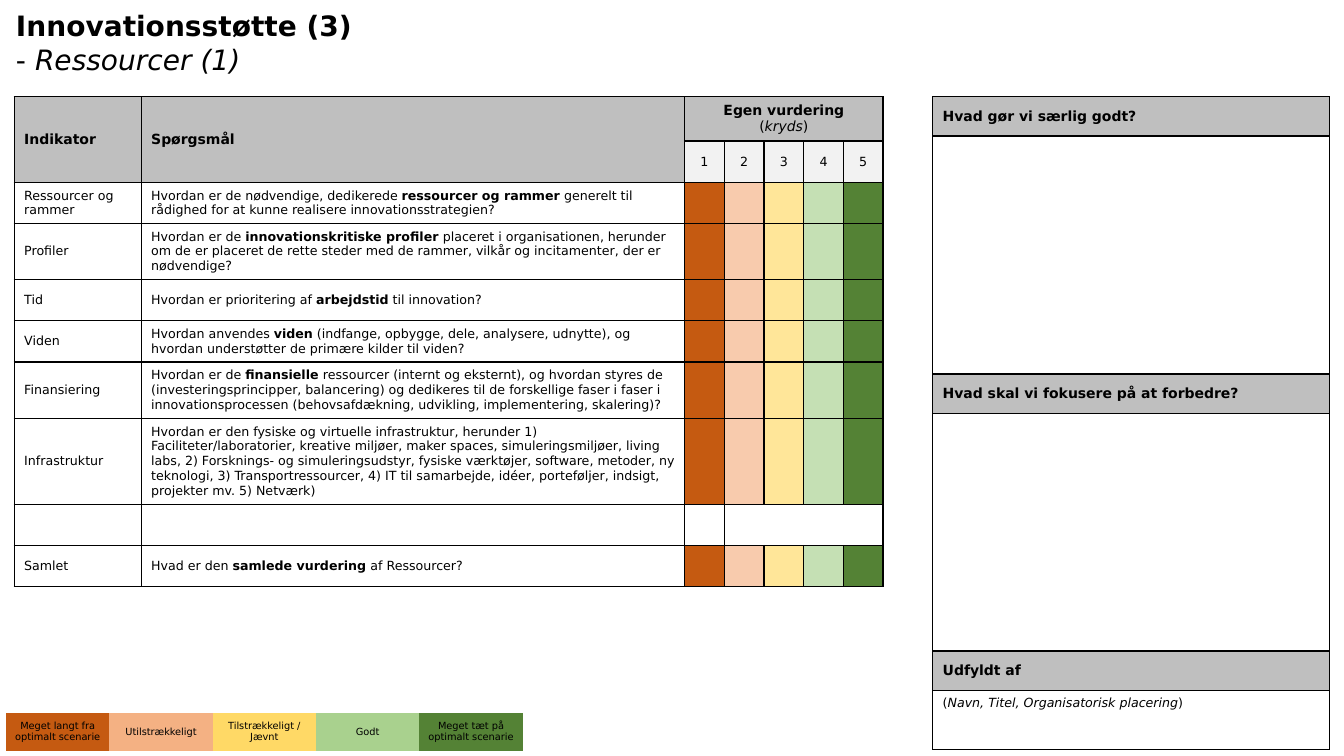
from copy import deepcopy

from lxml.etree import SubElement
from pptx import Presentation
from pptx.dml.color import RGBColor
from pptx.enum.text import MSO_ANCHOR as Anchor, PP_ALIGN as Align
from pptx.oxml.ns import qn
from pptx.util import Inches, Pt

FONT = "DejaVu Sans"
COLORS = {"ink": "000000", "header": "BFBFBF", "score": "F2F2F2"}
SCALE = ["C55A11", "F8CBAD", "FFE699", "C5E0B4", "548235"]
LEGEND = {
    "Meget langt fra optimalt scenarie": "C55A11",
    "Utilstrækkeligt": "F4B183",
    "Tilstrækkeligt / Jævnt": "FFD966",
    "Godt": "A9D18E",
    "Meget tæt på optimalt scenarie": "548235",
}
NO_STYLE = "{2D5ABB26-0587-4C30-8999-92F81FD0307C}"

# Each run is (text, style): "b" bold, "i" italic, "" plain.
QUESTIONS = [
    ("Ressourcer og rammer", [
        ("Hvordan er de nødvendige, dedikerede ", ""), ("ressourcer og rammer ", "b"),
        ("generelt til rådighed for at kunne realisere innovationsstrategien?", "")]),
    ("Profiler", [
        ("Hvordan er de ", ""), ("innovationskritiske profiler ", "b"),
        ("placeret i organisationen, herunder om de er placeret de rette steder med de "
         "rammer, vilkår og incitamenter, der er nødvendige?", "")]),
    ("Tid", [
        ("Hvordan er prioritering af ", ""), ("arbejdstid", "b"), (" til innovation?", "")]),
    ("Viden", [
        ("Hvordan anvendes ", ""), ("viden", "b"),
        (" (indfange, opbygge, dele, analysere, udnytte), og hvordan understøtter de "
         "primære kilder til viden?", "")]),
    ("Finansiering", [
        ("Hvordan er de ", ""), ("finansielle ", "b"),
        ("ressourcer (internt og eksternt), og hvordan styres de (investeringsprincipper, "
         "balancering) og dedikeres til de forskellige faser i faser i innovationsprocessen "
         "(behovsafdækning, udvikling, implementering, skalering)?", "")]),
    ("Infrastruktur", [
        ("Hvordan er den fysiske og virtuelle infrastruktur, herunder 1) "
         "Faciliteter/laboratorier, kreative miljøer, maker spaces, simuleringsmiljøer, "
         "living labs, 2) Forsknings- og simuleringsudstyr, fysiske værktøjer, software, "
         "metoder, ny teknologi, 3) Transportressourcer, 4) IT til samarbejde, idéer, "
         "porteføljer, indsigt, projekter mv. 5) Netværk)", "")]),
    None,
    ("Samlet", [
        ("Hvad er den ", ""), ("samlede vurdering ", "b"), ("af Ressourcer?", "")]),
]


def write(paragraph, runs, size, align=Align.LEFT):
    """Add styled runs; a run that ends in a newline is followed by a line break."""
    paragraph.alignment = align
    for text, style in runs:
        run = paragraph.add_run()
        run.text = text.rstrip("\n")
        run.font.name, run.font.size = FONT, Pt(size)
        run.font.bold, run.font.italic = "b" in style, "i" in style
        run.font.color.rgb = RGBColor.from_string(COLORS["ink"])
        if text.endswith("\n"):
            paragraph.add_line_break()
            paragraph._p[-1].append(deepcopy(run._r.rPr))


def add_plain_table(left, top, columns, rows, border_sides):
    """Add an unstyled table; border_sides(row, column) names the drawn cell sides."""
    frame = slide.shapes.add_table(len(rows), len(columns), Inches(left), Inches(top),
                                   Inches(sum(columns)), Inches(sum(rows)))
    table = frame.table
    table.first_row = table.horz_banding = False
    table._tbl.tblPr.find(qn("a:tableStyleId")).text = NO_STYLE
    for column, width in zip(table.columns, columns):
        column.width = Inches(width)
    for row_index, height in enumerate(rows):
        table.rows[row_index].height = Inches(height)
        for column_index in range(len(columns)):
            cell = table.cell(row_index, column_index)
            cell.vertical_anchor = Anchor.MIDDLE
            cell.text_frame.paragraphs[0]._p.get_or_add_endParaRPr().set("sz", "900")
            properties = cell._tc.get_or_add_tcPr()
            for side in border_sides(row_index, column_index):
                line = SubElement(properties, qn(f"a:ln{side}"), w=str(Pt(1)))
                fill = SubElement(line, qn("a:solidFill"))
                SubElement(fill, qn("a:srgbClr"), val=COLORS["ink"])
    return table


presentation = Presentation()
presentation.slide_width, presentation.slide_height = Inches(13.33), Inches(7.5)
slide = presentation.slides.add_slide(presentation.slide_layouts[6])

# Title
title = slide.shapes.add_textbox(Inches(0.06), Inches(0.04), Inches(9.92), Inches(0.77))
title.text_frame.word_wrap = True
write(title.text_frame.paragraphs[0], [("Innovationsstøtte (3)", "b")], 20)
write(title.text_frame.add_paragraph(), [("- ", ""), ("Ressourcer (1)", "i")], 20)

# Assessment table: two header rows, then one row per question
first_score, header_rows = 2, 2
blank_row = header_rows + QUESTIONS.index(None)
last_column = first_score + len(SCALE) - 1


def assessment_sides(row, column):
    """Leave the score cells of the blank row without inner lines."""
    if row != blank_row or column < first_score:
        return "LRTB"
    return {first_score: "LTB", last_column: "RTB"}.get(column, "TB")


assessment = add_plain_table(
    0.14, 0.96, [1.26, 5.39] + [0.394] * len(SCALE),
    [0.44, 0.41, 0.41, 0.55, 0.41, 0.41, 0.56, 0.85, 0.41, 0.41], assessment_sides)
headers = [
    (0, 1, 0, [("Indikator", "b")], Align.LEFT),
    (1, 1, 1, [("Spørgsmål", "b")], Align.LEFT),
    (first_score, 0, last_column,
     [("Egen vurdering\n", "b"), ("(", ""), ("kryds", "i"), (")", "")], Align.CENTER),
]
for column, end_row, end_column, runs, align in headers:
    cell = assessment.cell(0, column)
    cell.merge(assessment.cell(end_row, end_column))
    cell.fill.solid()
    cell.fill.fore_color.rgb = RGBColor.from_string(COLORS["header"])
    write(cell.text_frame.paragraphs[0], runs, 10, align)

for score, color in enumerate(SCALE, start=1):
    column = first_score + score - 1
    cell = assessment.cell(1, column)
    cell.fill.solid()
    cell.fill.fore_color.rgb = RGBColor.from_string(COLORS["score"])
    write(cell.text_frame.paragraphs[0], [(str(score), "")], 9, Align.CENTER)
    for row, question in enumerate(QUESTIONS, start=header_rows):
        if question:
            cell = assessment.cell(row, column)
            cell.fill.solid()
            cell.fill.fore_color.rgb = RGBColor.from_string(color)

for row, question in enumerate(QUESTIONS, start=header_rows):
    if question:
        indicator, runs = question
        write(assessment.cell(row, 0).text_frame.paragraphs[0], [(indicator, "")], 9)
        write(assessment.cell(row, 1).text_frame.paragraphs[0], runs, 9)

# Notes column: headings alternate with answer fields
notes = add_plain_table(9.25, 0.96, [3.94], [0.39, 2.36, 0.39, 2.36, 0.39, 0.59],
                        lambda row, column: "LRTB")
headings = ["Hvad gør vi særlig godt?", "Hvad skal vi fokusere på at forbedre?", "Udfyldt af"]
for index, heading in enumerate(headings):
    cell = notes.cell(2 * index, 0)
    cell.fill.solid()
    cell.fill.fore_color.rgb = RGBColor.from_string(COLORS["header"])
    write(cell.text_frame.paragraphs[0], [(heading, "b")], 10)
signature = notes.cell(5, 0)
signature.vertical_anchor = Anchor.TOP
write(signature.text_frame.paragraphs[0],
      [("(", ""), ("Navn, Titel, Organisatorisk placering", "i"), (")", "")], 9)

# Colour legend
legend = add_plain_table(0.06, 7.07, [1.025] * len(LEGEND), [0.38], lambda row, column: "")
for column, (label, color) in enumerate(LEGEND.items()):
    cell = legend.cell(0, column)
    cell.margin_left = cell.margin_right = Inches(0.07)
    cell.margin_top = cell.margin_bottom = 0
    cell.fill.solid()
    cell.fill.fore_color.rgb = RGBColor.from_string(color)
    write(cell.text_frame.paragraphs[0], [(label, "")], 7, Align.CENTER)

presentation.save("out.pptx")
